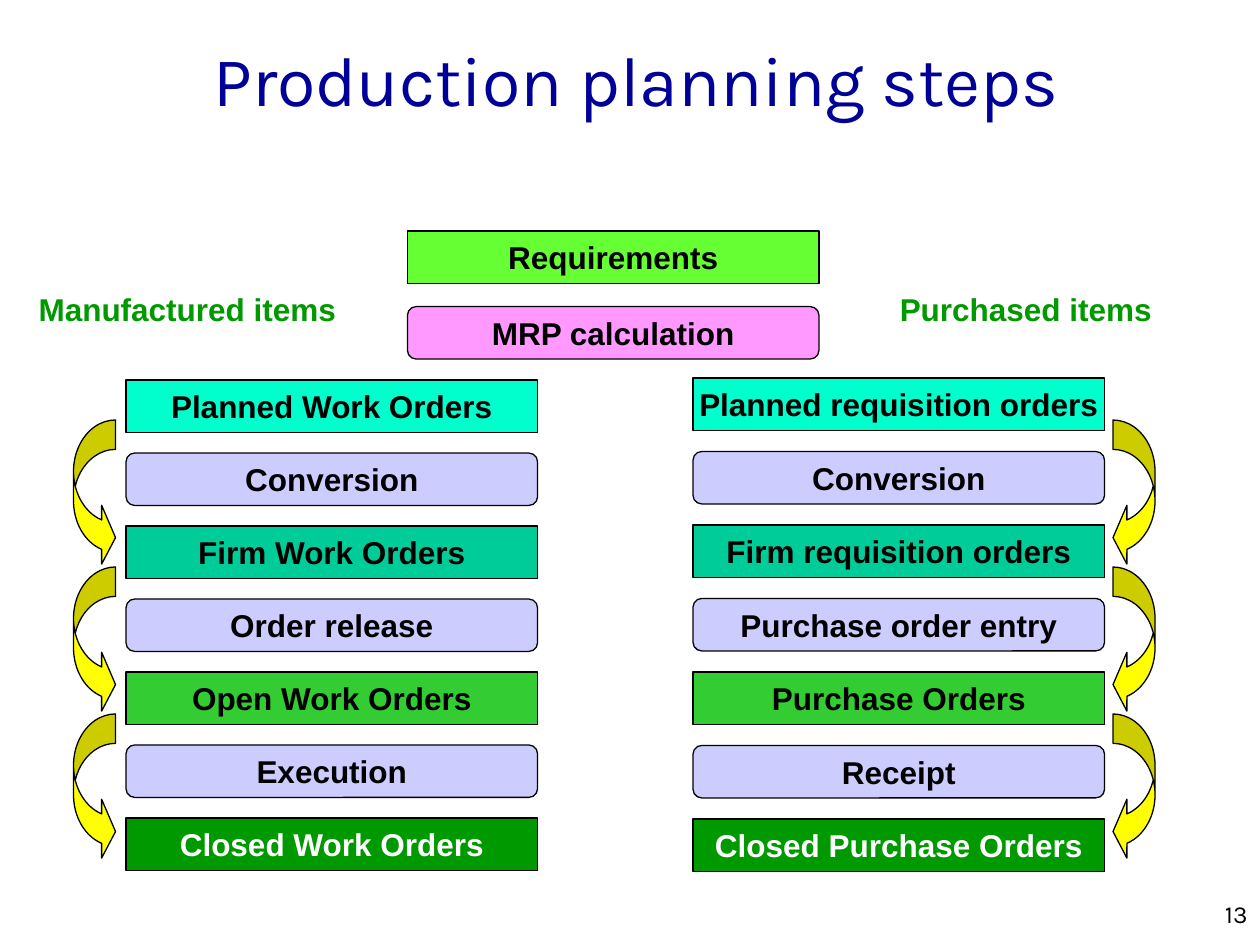
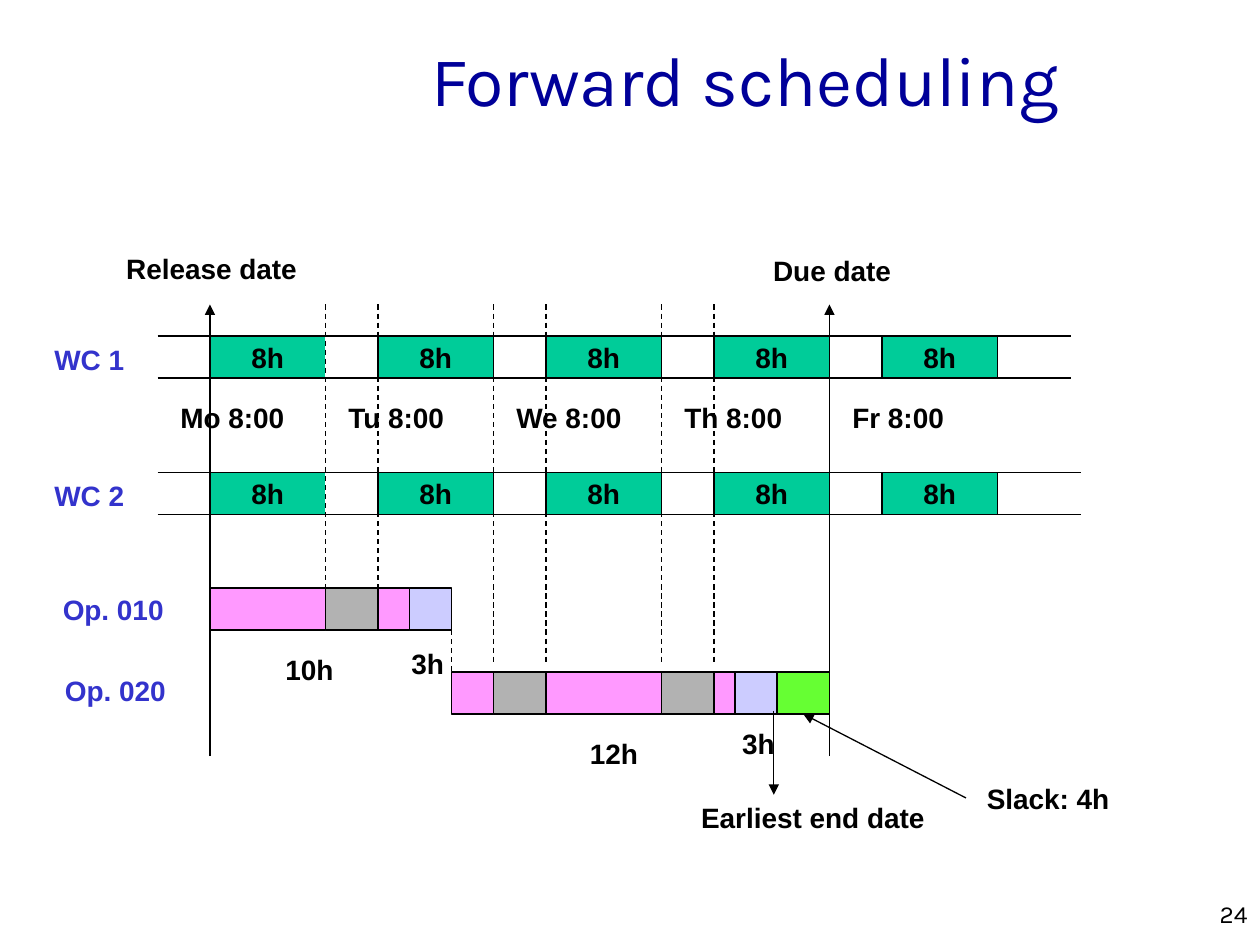
from itertools import product
from lxml import etree
from pptx import Presentation
from pptx.dml.color import RGBColor
from pptx.enum import dml, shapes, text
from pptx.oxml import ns
from pptx.util import Inches, Pt

COLS = 120
WIDTH, HEIGHT = Inches(10), Inches(7.5)
CELL = WIDTH // COLS
BODY, HEAD = "Arial", "Karla"

BLACK = RGBColor(0, 0, 0)
WHITE = RGBColor(255, 255, 255)
NAVY = RGBColor(0, 0, 0x99)
BLUE = RGBColor(0x33, 0x33, 0xCC)
LIME = RGBColor(0x66, 0xFF, 0x33)
AQUA = RGBColor(0, 0xFF, 0xCC)
TEAL = RGBColor(0, 0xCC, 0x99)
GREEN = RGBColor(0x33, 0xCC, 0x33)
FOREST = RGBColor(0, 0x99, 0)
PINK = RGBColor(0xFF, 0x99, 0xFF)
LILAC = RGBColor(0xCC, 0xCC, 0xFF)
GREY = RGBColor(0xB2, 0xB2, 0xB2)
YELLOW = RGBColor(0xFF, 0xFF, 0)

KIND = shapes.MSO_SHAPE
ALIGN = text.PP_ALIGN


def grid(*cells):
    return [round(cell * CELL) for cell in cells]


def write(shape, words, size, color, align, font=BODY, bold=True):
    frame = shape.text_frame
    frame.text = words
    para = frame.paragraphs[0]
    para.alignment = align
    style = para.runs[0].font
    style.name, style.size, style.bold = font, Pt(size), bold
    style.color.rgb = color


def box(slide, place, fill, words="", size=18, ink=BLACK, edge=BLACK, kind=KIND.RECTANGLE):
    shape = slide.shapes.add_shape(kind, *grid(*place))
    shape.shadow.inherit = False
    shape.fill.solid()
    shape.fill.fore_color.rgb = fill
    shape.line.color.rgb = edge
    shape.line.width = Pt(0.75)
    if words:
        shape.text_frame.word_wrap = False
        shape.text_frame.vertical_anchor = text.MSO_ANCHOR.MIDDLE
        write(shape, words, size, ink, ALIGN.CENTER)
    return shape


def label(slide, words, left, top, width, color=BLACK, size=16, align=ALIGN.LEFT):
    shape = slide.shapes.add_textbox(*grid(left, top, width, size * 0.28))
    shape.text_frame.word_wrap = False
    shape.text_frame.auto_size = text.MSO_AUTO_SIZE.SHAPE_TO_FIT_TEXT
    write(shape, words, size, color, align)


def rule(slide, start, end, dash=False, arrow=False):
    line = slide.shapes.add_connector(
        shapes.MSO_CONNECTOR.STRAIGHT, *grid(*start, *end))
    line.line.color.rgb = BLACK
    line.line.width = Pt(0.75)
    if dash:
        line.line.dash_style = dml.MSO_LINE.DASH
    if arrow:
        tip = etree.SubElement(line.line._get_or_add_ln(), ns.qn("a:tailEnd"))
        tip.set("type", "triangle")
    etree.SubElement(line._element.spPr, ns.qn("a:effectLst"))
    return line


def page(deck, title, number):
    slide = deck.slides.add_slide(deck.slide_layouts[6])
    head = slide.shapes.add_textbox(*grid(0, 0, 102, 15))
    foot = slide.shapes.add_textbox(*grid(95, 85, 25, 3))
    for shape in (head, foot):
        shape.text_frame.word_wrap = True
    head.text_frame.vertical_anchor = text.MSO_ANCHOR.MIDDLE
    write(head, title, 40, NAVY, ALIGN.RIGHT, HEAD, False)
    write(foot, str(number), 14, BLACK, ALIGN.RIGHT, HEAD, False)
    return slide


def step(slide, words, left, top, fill, ink=BLACK, soft=False):
    kind = KIND.ROUNDED_RECTANGLE if soft else KIND.RECTANGLE
    box(slide, (left, top, 39.2, 5), fill, words, ink=ink, kind=kind)


def chain(slide, names, left, top, pitch):
    fills = [AQUA, LILAC, TEAL, LILAC, GREEN, LILAC, FOREST]
    for row, (name, fill) in enumerate(zip(names, fills)):
        ink = WHITE if fill == FOREST else BLACK
        step(slide, name, left, top + row * pitch, fill, ink, fill == LILAC)


def bends(slide, kind, left):
    for row in range(3):
        bend = box(slide, (left, 40 + 14 * row, 4, 14), YELLOW, kind=kind)
        for spot, value in enumerate((0.7, 1.4, 0.33)):
            bend.adjustments[spot] = value


def steps(deck):
    slide = page(deck, "Production planning steps", 13)
    step(slide, "Requirements", 38.8, 22, LIME)
    step(slide, "MRP calculation", 38.8, 29.2, PINK, soft=True)
    label(slide, "Manufactured items", 2.5, 27, 30.7, FOREST, 18, ALIGN.CENTER)
    label(slide, "Purchased items", 84.5, 27, 26.4, FOREST, 18, ALIGN.CENTER)
    chain(slide, ["Planned Work Orders", "Conversion", "Firm Work Orders",
                  "Order release", "Open Work Orders", "Execution",
                  "Closed Work Orders"], 12, 36.2, 6.95)
    chain(slide, ["Planned requisition orders", "Conversion",
                  "Firm requisition orders", "Purchase order entry",
                  "Purchase Orders", "Receipt", "Closed Purchase Orders"],
          66, 36, 7)
    bends(slide, KIND.CURVED_RIGHT_ARROW, 7)
    bends(slide, KIND.CURVED_LEFT_ARROW, 106)


def center(slide, name, top, right):
    for day in range(5):
        edge = BLACK if day else WHITE
        box(slide, (20 + 16 * day, top, 11, 4), TEAL, "8h", 16, edge=edge)
    for row in (top, top + 4):
        rule(slide, (15, row), (right, row))
    label(slide, name, 4, top, 9.1, BLUE)


def track(slide, left, top, parts):
    for width, fill in parts:
        last = box(slide, (left, top, width, 4), fill)
        left += width
    return last


def forward(deck):
    slide = page(deck, "Forward scheduling", 24)
    center(slide, "WC 1", 32, 102)
    center(slide, "WC 2", 45, 103)
    days = [("Mo", 12.3), ("Tu", 11.8), ("We", 12.5), ("Th", 11.8), ("Fr", 11.1)]
    for spot, (day, width) in enumerate(days):
        label(slide, f"{day} 8:00", 16 + 16 * spot, 37.6, width)

    track(slide, 20, 56, [(11, PINK), (5, GREY), (3, PINK), (4, LILAC)])
    slack = track(slide, 43, 64, [(4, PINK), (5, GREY), (11, PINK), (5, GREY),
                                  (2, PINK), (4, LILAC), (5, LIME)])
    label(slide, "Op. 010", 4.8, 55.8, 12.1, BLUE)
    label(slide, "Op. 020", 5, 63.6, 12.1, BLUE)
    for words, left, top, width in [("10h", 26, 61.6, 7), ("3h", 38, 61, 5.5),
                                    ("12h", 55, 69.6, 7), ("3h", 69.5, 68.6, 5.5)]:
        label(slide, words, left, top, width)

    for left in (20, 79):
        rule(slide, (left, 72), (left, 29), arrow=True)
    label(slide, "Release date", 10.8, 23.4, 18.7, align=ALIGN.CENTER)
    label(slide, "Due date", 72.4, 23.6, 13.7, align=ALIGN.CENTER)
    for day, side in product(range(3), (31, 36)):
        left = side + 16 * day
        rule(slide, (left, 29), (left, 63 if day else 56), dash=True)
    rule(slide, (43, 60), (43, 64), dash=True)

    rule(slide, (73.7, 67.7), (73.7, 75.7), arrow=True)
    label(slide, "Earliest end date", 65.6, 75.7, 23.8)
    rule(slide, (92, 76), (77, 68), arrow=True).end_connect(slack, 2)
    label(slide, "Slack: 4h", 92.8, 73.8, 14.2)


def main():
    deck = Presentation()
    deck.slide_width, deck.slide_height = WIDTH, HEIGHT
    steps(deck)
    forward(deck)
    deck.save("out.pptx")


if __name__ == "__main__":
    main()
